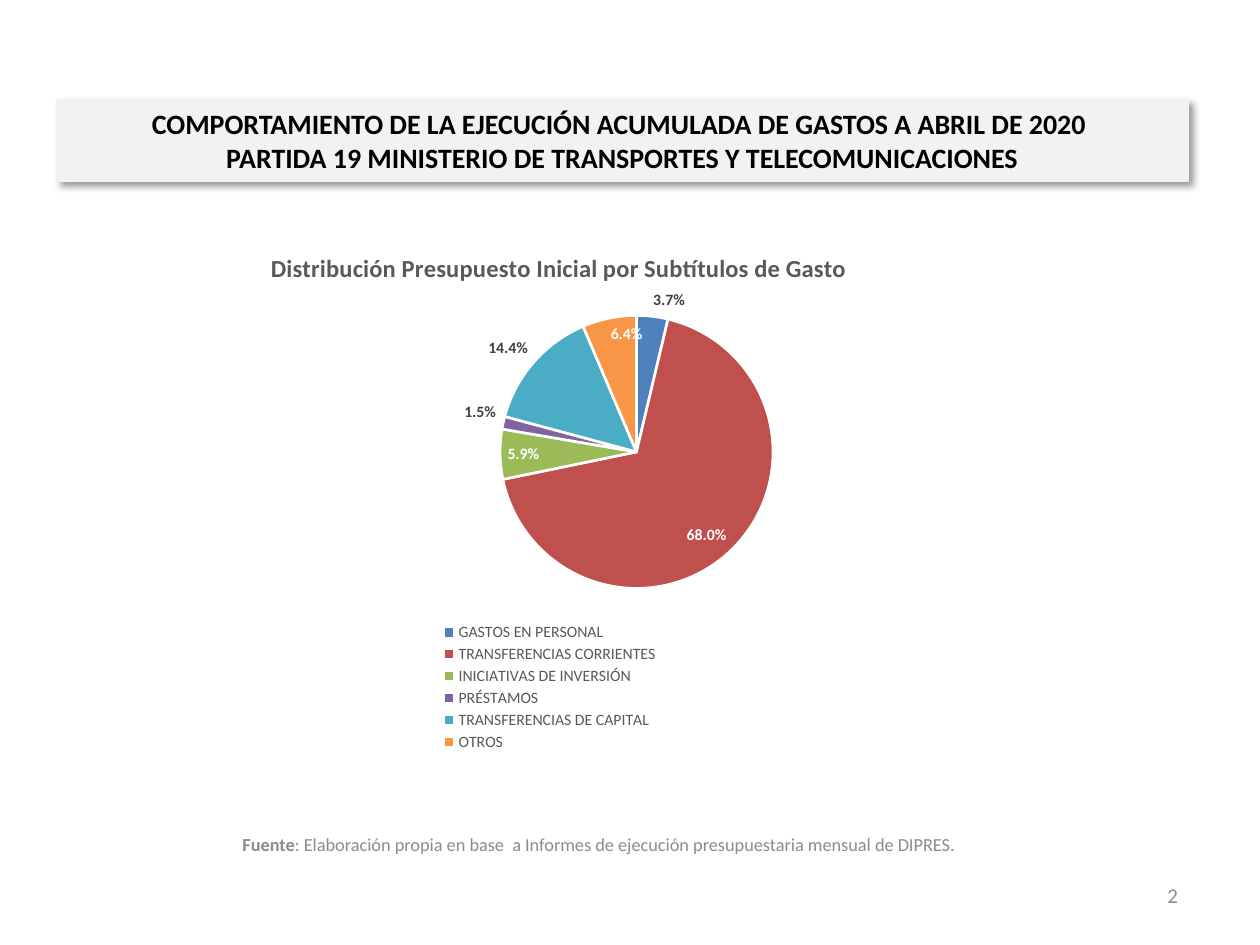
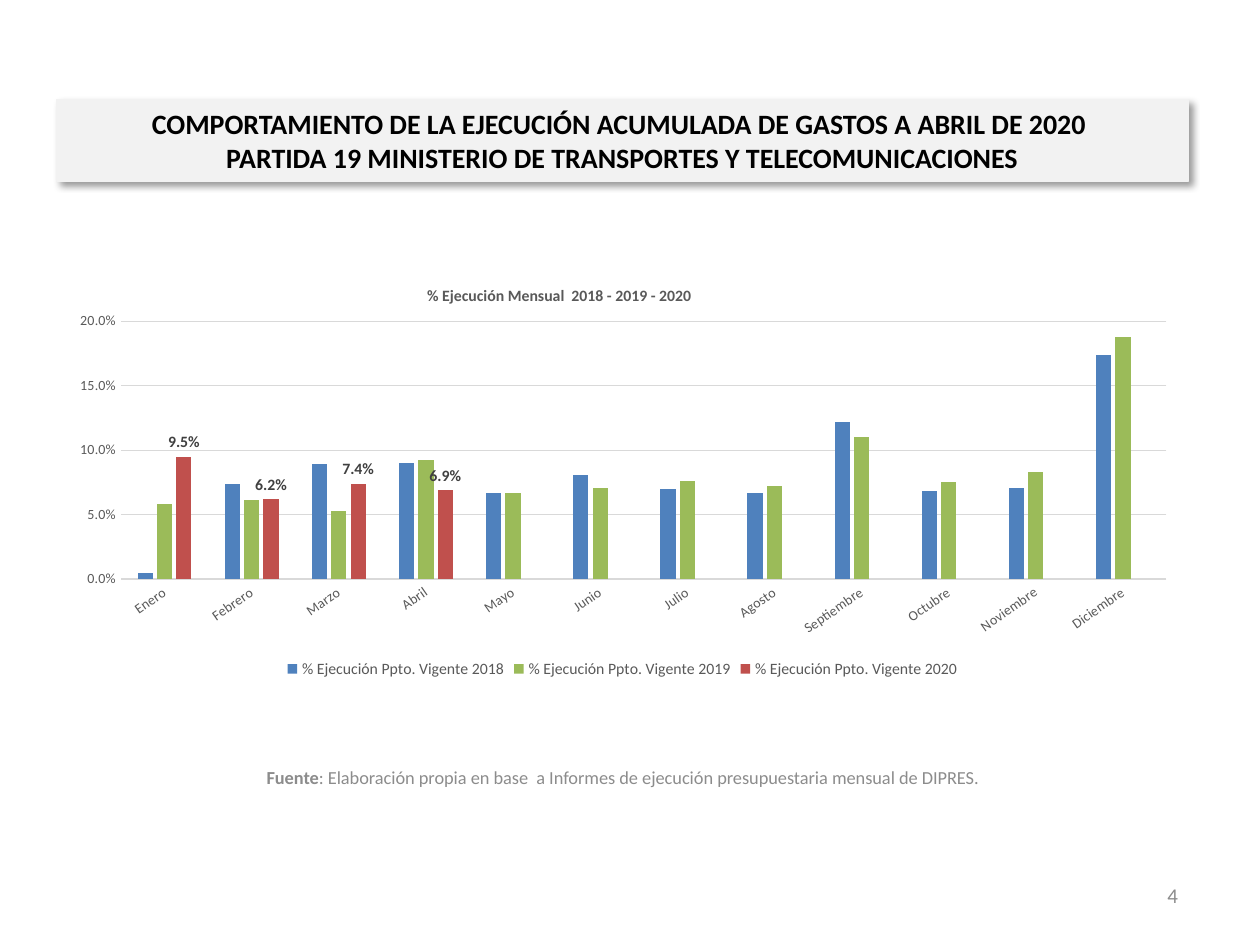
from lxml.etree import SubElement
from pptx import Presentation
from pptx.chart.data import CategoryChartData
from pptx.dml.color import RGBColor
from pptx.enum.chart import (XL_CHART_TYPE, XL_LABEL_POSITION,
                             XL_LEGEND_POSITION, XL_TICK_MARK)
from pptx.enum.shapes import MSO_SHAPE
from pptx.enum.text import MSO_ANCHOR, PP_ALIGN
from pptx.oxml import parse_xml
from pptx.oxml.ns import nsdecls, qn
from pptx.util import Cm, Pt

# Content
FONT = "Calibri"
COLORS = {
    "white": "FFFFFF", "black": "000000", "band": "F2F2F2", "footer": "8C8C8C",
    "text": "595959", "label": "404040", "grid": "D9D9D9",
    "blue": "4F81BD", "red": "C0504D", "green": "9BBB59",
    "purple": "8064A2", "teal": "4BACC6", "orange": "F79646",
}
TITLE = ("COMPORTAMIENTO DE LA EJECUCIÓN ACUMULADA DE GASTOS A ABRIL DE 2020 \v"
         "PARTIDA 19 MINISTERIO DE TRANSPORTES Y TELECOMUNICACIONES")
SOURCE = ("Fuente", ": Elaboración propia en base  a Informes de ejecución "
                    "presupuestaria mensual de DIPRES.")

PIE_TITLE = "Distribución Presupuesto Inicial por Subtítulos de Gasto"
PIE_SLICES = [  # subtitle, share in %, colour, label inside the slice
    ("GASTOS EN PERSONAL", 3.7, "blue", False),
    ("TRANSFERENCIAS CORRIENTES", 68.0, "red", True),
    ("INICIATIVAS DE INVERSIÓN", 5.9, "green", True),
    ("PRÉSTAMOS", 1.5, "purple", False),
    ("TRANSFERENCIAS DE CAPITAL", 14.4, "teal", False),
    ("OTROS", 6.4, "orange", True),
]

MONTHLY_TITLE = "% Ejecución Mensual  2018 - 2019 - 2020"
MONTHS = ["Enero", "Febrero", "Marzo", "Abril", "Mayo", "Junio", "Julio",
          "Agosto", "Septiembre", "Octubre", "Noviembre", "Diciembre"]
YEARS = [
    (2018, "blue", [0.005, 0.074, 0.089, 0.09, 0.067, 0.081,
                    0.07, 0.067, 0.122, 0.068, 0.071, 0.174]),
    (2019, "green", [0.058, 0.061, 0.053, 0.092, 0.067, 0.071,
                     0.076, 0.072, 0.11, 0.075, 0.083, 0.188]),
    (2020, "red", [0.095, 0.062, 0.074, 0.069]),
]

# Shared places, in cm: left, top, width, height
SLIDE = (25.4, 19.05)
BAND = (1.14, 2.01, 22.81, 1.65)
NUMBER = (18.08, 17.53, 5.92, 1.02)


def cm(box):
    return [Cm(v) for v in box]


def rgb(name):
    return RGBColor.from_string(COLORS[name])


def style(font, size, color, bold=False):
    font.name, font.size, font.bold = FONT, Pt(size), bold
    font.color.rgb = rgb(color)


# Slide frame: title band, source line, slide number
def add_text(slide, box, parts, size, align):
    tf = slide.shapes.add_textbox(*cm(box)).text_frame
    tf.word_wrap, tf.vertical_anchor = True, MSO_ANCHOR.MIDDLE
    p = tf.paragraphs[0]
    p.alignment = align
    for text, bold in parts:
        r = p.add_run()
        r.text = text
        style(r.font, size, "footer", bold)


def add_band(slide):
    sp = slide.shapes.add_shape(MSO_SHAPE.RECTANGLE, *cm(BAND))
    sp.fill.solid()
    sp.fill.fore_color.rgb = sp.line.color.rgb = rgb("band")
    sp.line.width = Pt(0.75)
    sp.shadow.inherit = False
    effects = sp._element.spPr.find(qn("a:effectLst"))
    effects.append(parse_xml(
        f'<a:outerShdw {nsdecls("a")} blurRad="{Pt(4)}" dist="{Pt(3)}" dir="2700000" '
        f'algn="tl" rotWithShape="0"><a:srgbClr val="{COLORS["black"]}">'
        '<a:alpha val="40000"/></a:srgbClr></a:outerShdw>'))
    tf = sp.text_frame
    tf.word_wrap, tf.vertical_anchor = True, MSO_ANCHOR.MIDDLE
    p = tf.paragraphs[0]
    p.text, p.alignment = TITLE, PP_ALIGN.CENTER
    for r in p.runs:
        style(r.font, 16, "black", True)


def new_slide(prs, number, source_box):
    slide = prs.slides.add_slide(prs.slide_layouts[6])
    add_band(slide)
    add_text(slide, source_box, zip(SOURCE, (True, False)), 10.5, PP_ALIGN.CENTER)
    add_text(slide, NUMBER, [(str(number), False)], 12, PP_ALIGN.RIGHT)
    return slide


# Chart parts
def place(element, x, y, w=None, h=None):
    """Fix a chart part at fractions of the chart area."""
    for old in element.findall(qn("c:layout")):
        element.remove(old)
    layout = parse_xml(f'<c:layout {nsdecls("c")}><c:manualLayout/></c:layout>')
    is_plot = element.tag == qn("c:plotArea")
    settings = [("layoutTarget", "inner")] if is_plot else []
    settings += [("xMode", "edge"), ("yMode", "edge"),
                 ("x", x), ("y", y), ("w", w), ("h", h)]
    for tag, value in settings:
        if value is not None:
            SubElement(layout[0], qn(f"c:{tag}")).set("val", str(value))
    if is_plot:
        element.insert(0, layout)
    else:
        element.find(qn("c:overlay")).addprevious(layout)


def add_chart(slide, kind, box, data, title, title_size, title_at, plot_at, legend_pos):
    chart = slide.shapes.add_chart(kind, *cm(box), data).chart
    style(chart.font, 10, "black")
    chart.has_title = True
    p = chart.chart_title.text_frame.paragraphs[0]
    p.text = title
    style(p.runs[0].font, title_size, "text", True)
    chart.chart_title.include_in_layout = False
    place(chart.chart_title._element, *title_at)
    place(chart._chartSpace.chart.plotArea, *plot_at)
    chart.has_legend = True
    chart.legend.position = legend_pos
    chart.legend.include_in_layout = False
    style(chart.legend.font, 9, "text")
    return chart


def add_pie(slide):
    data = CategoryChartData(number_format='0.0"%"')
    data.categories = [s[0] for s in PIE_SLICES]
    data.add_series("Presupuesto Inicial", [s[1] for s in PIE_SLICES])
    chart = add_chart(slide, XL_CHART_TYPE.PIE, (1.14, 4.19, 22.86, 11.86), data,
                      PIE_TITLE, 14, (0.185, 0.065), (0.023, 0.183, 0.977, 0.464),
                      XL_LEGEND_POSITION.RIGHT)
    place(chart.legend._element, 0.31, 0.7, 0.25, 0.23)
    plot = chart.plots[0]
    plot.vary_by_categories = True
    for i, (_, _, color, inside) in enumerate(PIE_SLICES):
        point = plot.series[0].points[i]
        point.format.fill.solid()
        point.format.fill.fore_color.rgb = rgb(color)
        point.format.line.color.rgb = rgb("white")
        point.format.line.width = Pt(1.5)
        label = point.data_label
        style(label.font, 9, "white" if inside else "label", True)
        label.position = (XL_LABEL_POSITION.INSIDE_END if inside
                          else XL_LABEL_POSITION.OUTSIDE_END)


def add_monthly_columns(slide):
    data = CategoryChartData(number_format="0.0%")
    data.categories = MONTHS
    for year, _, values in YEARS:
        missing = [None] * (len(MONTHS) - len(values))
        data.add_series(f"% Ejecución Ppto. Vigente {year}", values + missing)
    chart = add_chart(slide, XL_CHART_TYPE.COLUMN_CLUSTERED, (1.14, 5.26, 22.81, 8.51),
                      data, MONTHLY_TITLE, 9, (0.325, 0.05),
                      (0.057, 0.143, 0.924, 0.611), XL_LEGEND_POSITION.BOTTOM)
    plot = chart.plots[0]
    plot.vary_by_categories = False
    plot.gap_width, plot.overlap = 219, -27
    for series, (_, color, _) in zip(plot.series, YEARS):
        series.format.fill.solid()
        series.format.fill.fore_color.rgb = rgb(color)
        series.invert_if_negative = False
    labels = plot.series[-1].data_labels
    labels.show_value = True
    labels.number_format, labels.number_format_is_linked = "0.0%", False
    labels.position = XL_LABEL_POSITION.OUTSIDE_END
    style(labels.font, 9, "label", True)

    # Axes
    months, shares = chart.category_axis, chart.value_axis
    for axis in (months, shares):
        axis.major_tick_mark = axis.minor_tick_mark = XL_TICK_MARK.NONE
        style(axis.tick_labels.font, 8, "text")
    body = months._element.find(qn("c:txPr")).find(qn("a:bodyPr"))
    body.set("rot", str(-35 * 60000))
    shares.minimum_scale, shares.maximum_scale, shares.major_unit = 0, 0.2, 0.05
    shares.tick_labels.number_format = "0.0%"
    shares.tick_labels.number_format_is_linked = False
    shares.format.line.fill.background()
    for line in (months.format.line, shares.major_gridlines.format.line):
        line.color.rgb, line.width = rgb("grid"), Pt(0.75)


def main():
    prs = Presentation()
    prs.slide_width, prs.slide_height = cm(SLIDE)
    add_pie(new_slide(prs, 2, (1.14, 16.51, 21.87, 1.02)))
    add_monthly_columns(new_slide(prs, 4, (2.26, 15.27, 20.6, 0.81)))
    prs.save("out.pptx")


if __name__ == "__main__":
    main()
